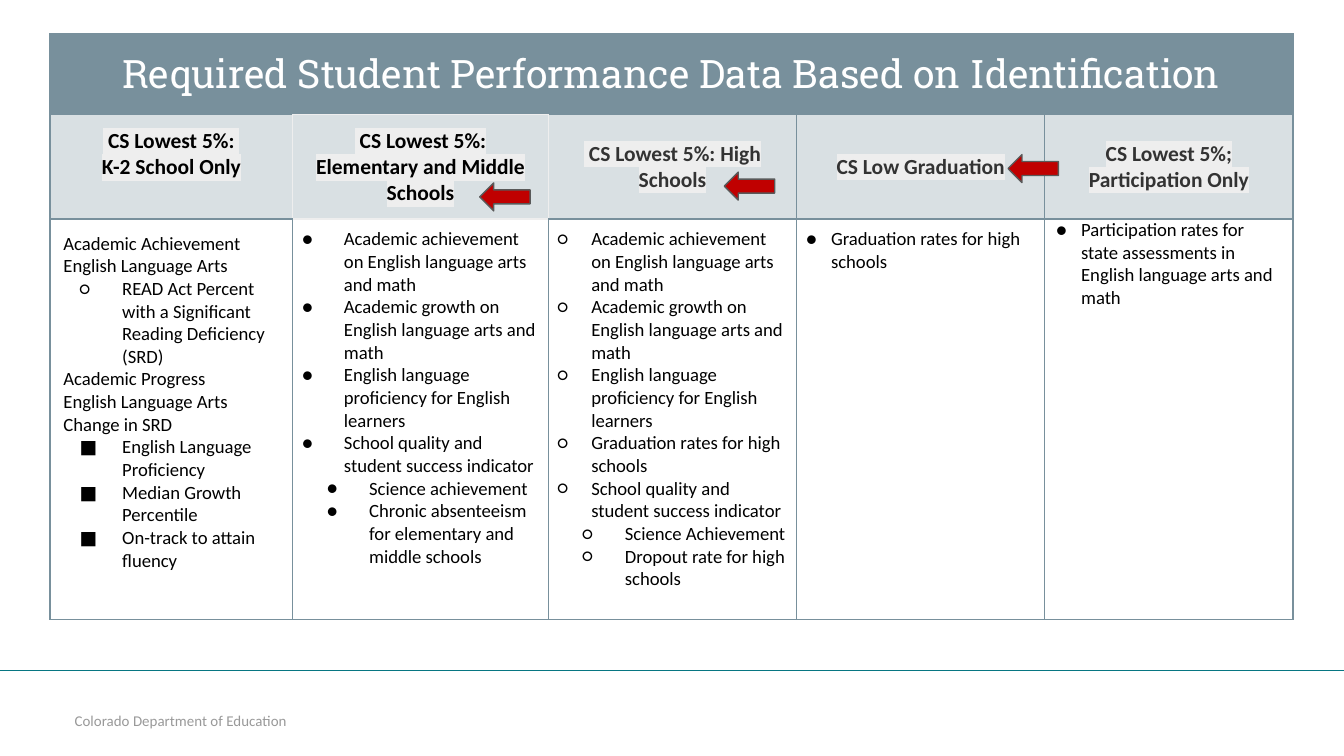
"""Build a slide with a table of the student performance data that each school type must use."""
import pptx
import pptx.dml.color
import pptx.enum.shapes
import pptx.enum.text
import pptx.oxml
import pptx.oxml.ns
import pptx.util

Pt = pptx.util.Pt
RGB = pptx.dml.color.RGBColor
Anchor = pptx.enum.text.MSO_ANCHOR
Align = pptx.enum.text.PP_ALIGN
Shape = pptx.enum.shapes.MSO_SHAPE
qn = pptx.oxml.ns.qn

SLATE = RGB(0x78, 0x90, 0x9C)
PALE = RGB(0xEE, 0xEE, 0xEE)
WHITE = RGB(255, 255, 255)
BLACK = RGB(0, 0, 0)
DARK = RGB(0x33, 0x33, 0x33)
GREY = RGB(0x99, 0x99, 0x99)
EDGE = RGB(0x59, 0x59, 0x59)
RED = RGB(0xC0, 0, 0)
TEAL = RGB(0x07, 0x76, 0x82)

TITLE = "Required Student Performance Data Based on Identification"
FOOTER = "Colorado Department of Education"
HEADS = [
    [" CS Lowest 5%: ", "K-2 School Only"],
    [" CS Lowest 5%: Elementary and Middle Schools"],
    [" CS Lowest 5%: High Schools"],
    ["CS Low Graduation"],
    ["CS Lowest 5%; Participation Only"],
]
LISTS = [
    [("plain", "Academic Achievement"),
     ("plain", "English Language Arts"),
     ("ring", "READ Act Percent with a Significant Reading Deficiency (SRD)"),
     ("plain", "Academic Progress"),
     ("plain", "English Language Arts"),
     ("plain", "Change in SRD"),
     ("box", "English Language Proficiency"),
     ("box", "Median Growth Percentile"),
     ("box", "On-track to attain fluency")],
    [("dot", "Academic achievement on English language arts and math"),
     ("dot", "Academic growth on English language arts and math"),
     ("dot", "English language proficiency for English learners"),
     ("dot", "School quality and student success indicator"),
     ("subdot", "Science achievement"),
     ("subdot", "Chronic absenteeism for elementary and middle schools")],
    [("open", "Academic achievement on English language arts and math"),
     ("open", "Academic growth on English language arts and math"),
     ("open", "English language proficiency for English learners"),
     ("open", "Graduation rates for high schools"),
     ("open", "School quality and student success indicator"),
     ("subopen", "Science Achievement"),
     ("subopen", "Dropout rate for high schools")],
    [("tight", "Graduation rates for high schools")],
    [("tight", "Participation rates for state assessments in English language arts and math")],
]
# name: level, bullet, left margin, first-line indent
KINDS = {
    "ring": (1, "○", 31.5, -22.8),
    "box": (2, "■", 31.5, -22.8),
    "dot": (0, "●", 22.5, -22.8),
    "subdot": (0, "●", 36, -22.8),
    "open": (1, "○", 18, -18.5),
    "subopen": (1, "○", 36, -22.8),
    "tight": (0, "●", 13.5, -13.5),
}
COLS = [130, 137, 133, 133, 133]
ROWS = [43.5, 55.5, 214.5]
PADS = [(7.2, 7.2), (5, 5), (5, 5), (5, 5), (6, 0)]
ARROWS = [(257, 98), (388, 92.2), (540, 82.8)]

BIG = dict(name="Roboto Slab", size=Pt(21), bold=False)
HEAD = dict(name="Calibri", size=Pt(11.5), bold=True)
BODY = dict(name="Calibri", size=Pt(10), bold=False)
SMALL = dict(name="Calibri", size=Pt(8))


def add(node, tag, **attrs):
    child = pptx.oxml.parse_xml(
        '<a:%s xmlns:a="http://schemas.openxmlformats.org/drawingml/2006/main"/>' % tag)
    for key, value in attrs.items():
        child.set(key, str(value))
    node.append(child)
    return child


def write(para, text, form, color, mark=False):
    run = para.add_run()
    run.text = text
    for key, value in form.items():
        setattr(run.font, key, value)
    run.font.color.rgb = color
    if mark:
        props = run.font._element
        light = add(props, "highlight")
        add(light, "srgbClr", val=PALE)
        props.find(qn("a:latin")).addprevious(light)


def bullet(para, kind):
    para.level, char, left, first = KINDS[kind]
    props = para._p.get_or_add_pPr()
    props.set("marL", str(int(Pt(left))))
    props.set("indent", str(int(Pt(first))))
    add(add(props, "buClr"), "srgbClr", val=BLACK)
    add(props, "buFont", typeface="Calibri")
    add(props, "buChar", char=char)


def frame(cell, pale):
    props = cell._tc.get_or_add_tcPr()
    for side in "LRTB":
        line = add(props, "ln" + side, w=int(Pt(0.75)))
        color = PALE if side in pale else SLATE
        add(add(line, "solidFill"), "srgbClr", val=color)


def dress(cell, pads, fill, pale="", anchor=Anchor.TOP):
    frame(cell, pale)
    cell.fill.solid()
    cell.fill.fore_color.rgb = fill
    cell.vertical_anchor = anchor
    side, top = map(Pt, pads)
    for key, value in dict(margin_left=side, margin_right=side,
                           margin_top=top, margin_bottom=top).items():
        setattr(cell, key, value)


def paras(cell, items):
    for spot, item in enumerate(items):
        box = cell.text_frame
        yield (box.add_paragraph() if spot else box.paragraphs[0]), item


def grid(slide):
    table = slide.shapes.add_table(3, 5, Pt(26.8), Pt(18), Pt(sum(COLS)), Pt(sum(ROWS))).table
    table.first_row = table.horz_banding = False
    for col, width in zip(table.columns, COLS):
        col.width = Pt(width)
    for row, height in zip(table.rows, ROWS):
        row.height = Pt(height)
    top = table.cell(0, 0)
    top.merge(table.cell(0, 4))
    for cell in table.rows[0].cells:
        dress(cell, PADS[0], SLATE)
    top.text_frame.paragraphs[0].alignment = Align.CENTER
    write(top.text_frame.paragraphs[0], TITLE, BIG, WHITE)
    for col, (head, items, pads) in enumerate(zip(HEADS, LISTS, PADS)):
        early = col < 2
        cell = table.cell(1, col)
        dress(cell, PADS[0] if early else pads, SLATE, ["R", "LRTB", "L", "", ""][col],
              Anchor.TOP if early else Anchor.MIDDLE)
        tone = cell._tc.tcPr.find(qn("a:solidFill"))[0]
        add(tone, "alpha", val=28000)
        for para, text in paras(cell, head):
            para.alignment = Align.CENTER
            write(para, text, HEAD, BLACK if early else DARK, True)
        cell = table.cell(2, col)
        dress(cell, pads, WHITE, "T" if col == 1 else "")
        for para, (kind, text) in paras(cell, items):
            if kind in KINDS:
                bullet(para, kind)
            write(para, text, BODY, BLACK)


def main():
    deck = pptx.Presentation()
    deck.slide_width, deck.slide_height = Pt(720), Pt(405)
    slide = deck.slides.add_slide(deck.slide_layouts[6])
    note = slide.shapes.add_textbox(Pt(40), Pt(381), Pt(232.5), Pt(9.5)).text_frame
    for key in ("margin_left", "margin_right", "margin_top", "margin_bottom"):
        setattr(note, key, 0)
    note.word_wrap = True
    write(note.paragraphs[0], FOOTER, SMALL, GREY)
    rule = slide.shapes.add_connector(
        pptx.enum.shapes.MSO_CONNECTOR.STRAIGHT, 0, Pt(359.2), Pt(720), Pt(359.2))
    rule.line.color.rgb = TEAL
    rule.line.width = Pt(0.75)
    add(rule._element.spPr, "effectLst")
    grid(slide)
    for left, top in ARROWS:
        arrow = slide.shapes.add_shape(Shape.LEFT_ARROW, Pt(left), Pt(top), Pt(27), Pt(15))
        arrow.shadow.inherit = False
        arrow.fill.solid()
        arrow.fill.fore_color.rgb = RED
        arrow.line.color.rgb = EDGE
        arrow.line.width = Pt(0.75)
    deck.save("out.pptx")


if __name__ == "__main__":
    main()
